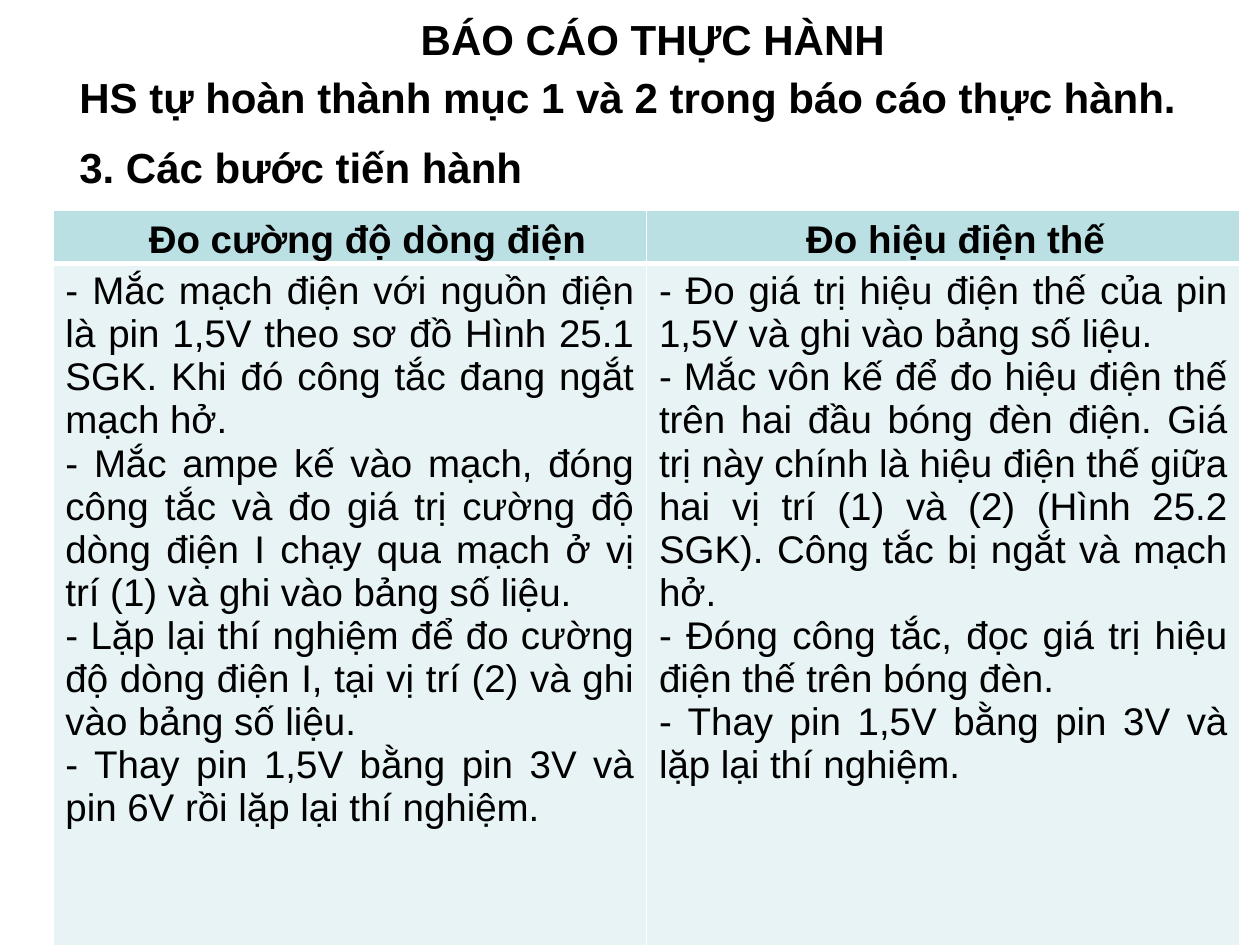
import pptx
import pptx.dml.color
import pptx.enum.text
import pptx.oxml.xmlchemy
import pptx.util
from lxml import etree
from pptx.oxml.ns import qn

Cm, Pt = pptx.util.Cm, pptx.util.Pt
ALIGN = pptx.enum.text.PP_ALIGN
ANCHOR = pptx.enum.text.MSO_ANCHOR

TITLE = "BÁO CÁO THỰC HÀNH"
INTRO = [
    "HS tự hoàn thành mục 1 và 2 trong báo cáo thực hành.",
    "3. Các bước tiến hành",
]
COLUMNS = {
    "Đo cường độ dòng điện": [
        "- Mắc mạch điện với nguồn điện là pin 1,5V theo sơ đồ Hình 25.1 SGK. "
        "Khi đó công tắc đang ngắt mạch hở.",
        "- Mắc ampe kế vào mạch, đóng công tắc và đo giá trị cường độ dòng điện I "
        "chạy qua mạch ở vị trí (1) và ghi vào bảng số liệu.",
        "- Lặp lại thí nghiệm để đo cường độ dòng điện I, tại vị trí (2) "
        "và ghi vào bảng số liệu.",
        "- Thay pin 1,5V bằng pin 3V và pin 6V rồi lặp lại thí nghiệm.",
    ],
    "Đo hiệu điện thế ": [
        "- Đo giá trị hiệu điện thế của pin 1,5V và ghi vào bảng số liệu.",
        "- Mắc vôn kế để đo hiệu điện thế trên hai đầu bóng đèn điện. Giá trị này "
        "chính là hiệu điện thế giữa hai vị trí (1) và (2) (Hình 25.2 SGK). "
        "Công tắc bị ngắt và mạch hở.",
        "- Đóng công tắc, đọc giá trị hiệu điện thế trên bóng đèn.",
        "- Thay pin 1,5V bằng pin 3V và lặp lại thí nghiệm.",
    ],
}


def color(value):
    return pptx.dml.color.RGBColor.from_string(value)


def format_para(para, size, align, bold=False, indented=False, after=0):
    para.alignment = align
    para.space_after = Pt(after)
    if indented:
        para.line_spacing = 1.15
        properties = para._p.get_or_add_pPr()
        properties.set("marL", "0")
        properties.set("indent", str(Cm(0.71)))
    for span in para.runs:
        span.font.name = "Arial"
        span.font.size = Pt(size)
        span.font.bold = bold
        span.font.color.rgb = color("000000")


def set_margins(target, horizontal, vertical):
    target.margin_left = target.margin_right = horizontal
    target.margin_top = target.margin_bottom = vertical


def set_borders(cell, top, bottom):
    """Draw white borders; they come before the fill in the cell properties."""
    properties = cell._tc.get_or_add_tcPr()
    widths = {"a:lnL": 1, "a:lnR": 1, "a:lnT": top, "a:lnB": bottom}
    for position, (tag, width) in enumerate(widths.items()):
        line = etree.Element(qn(tag), w=str(Pt(width)))
        fill = etree.SubElement(line, qn("a:solidFill"))
        etree.SubElement(fill, qn("a:srgbClr"), val="FFFFFF")
        properties.insert(position, line)


def add_heading(page, left, top, width, height):
    box = page.shapes.add_textbox(left, top, width, height)
    frame = box.text_frame
    frame.word_wrap = True
    frame.text = "\n".join([TITLE, *INTRO])
    title, *intro = frame.paragraphs
    format_para(title, 24, ALIGN.CENTER, bold=True, indented=True)
    for para in intro:
        format_para(para, 24, ALIGN.LEFT, bold=True, indented=True, after=7)


def add_steps_table(page, left, top, width, height):
    header_height = Cm(1.04)
    table = page.shapes.add_table(2, len(COLUMNS), left, top, width, height).table
    table.rows[0].height = header_height
    table.rows[1].height = height - header_height

    for index, (heading, steps) in enumerate(COLUMNS.items()):
        # Header cell
        header = table.cell(0, index)
        header.text_frame.text = heading
        header.vertical_anchor = ANCHOR.MIDDLE
        set_margins(header, Cm(0.02), 0)
        format_para(header.text_frame.paragraphs[0], 22, ALIGN.CENTER,
                    bold=True, indented=True)

        # Steps cell
        body = table.cell(1, index)
        body.text_frame.text = "\n".join(steps)
        set_margins(body, Cm(0.25), Cm(0.13))
        for para in body.text_frame.paragraphs:
            format_para(para, 22, ALIGN.JUSTIFY)

        # Fills and borders
        for cell, fill, upper, lower in ((header, "BBE0E3", 1, 3),
                                         (body, "E7F3F4", 3, 1)):
            cell.fill.solid()
            cell.fill.fore_color.rgb = color(fill)
            set_borders(cell, upper, lower)


def main():
    deck = pptx.Presentation()
    deck.slide_width, deck.slide_height = Cm(25.4), Cm(19.05)
    page = deck.slides.add_slide(deck.slide_layouts[6])
    add_heading(page, Cm(0.64), Cm(0), Cm(24.33), Cm(5.18))
    add_steps_table(page, Cm(1.07), Cm(4.24), Cm(23.93), Cm(15.29))
    deck.save("out.pptx")


if __name__ == "__main__":
    main()
